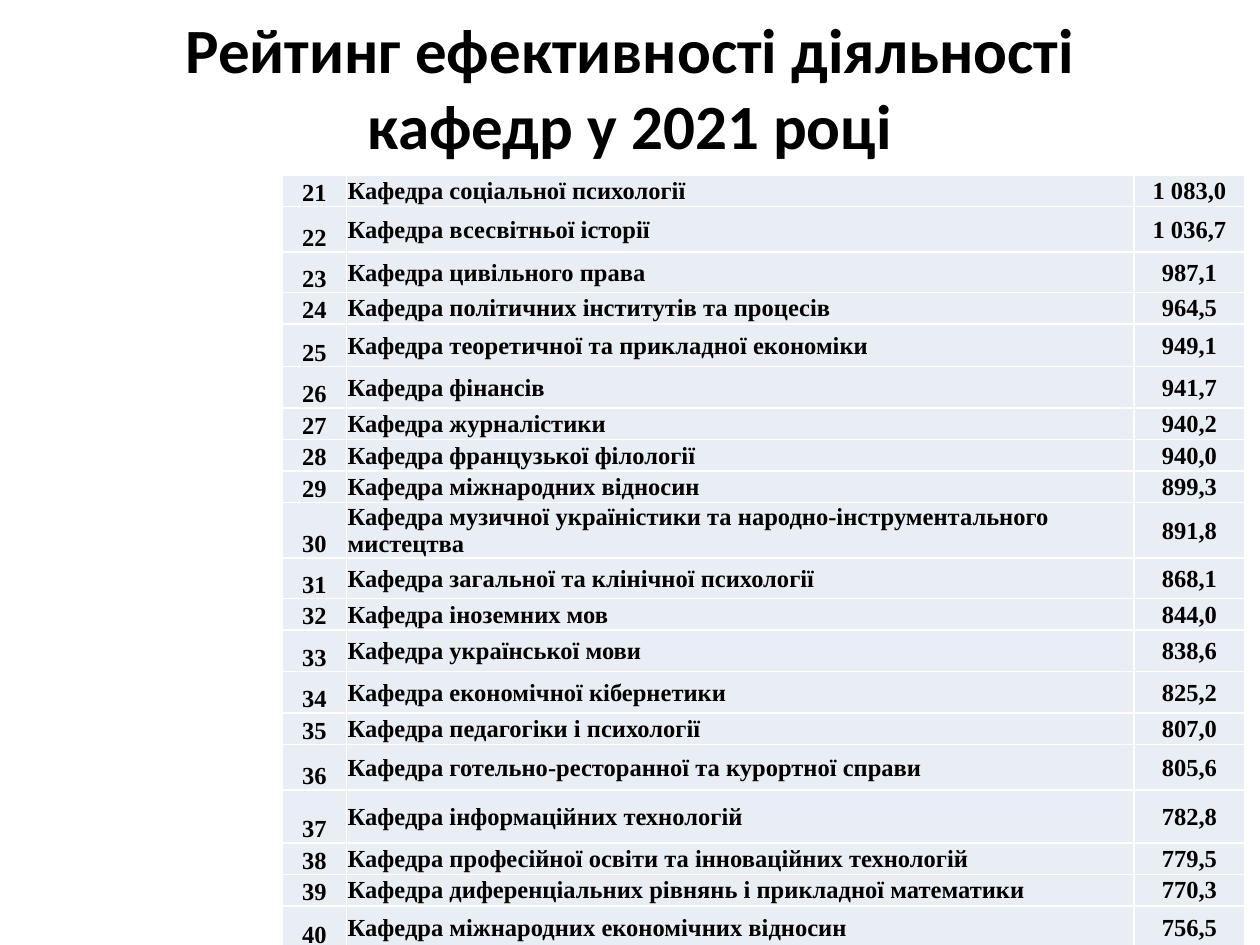
from lxml import etree
from pptx import Presentation
from pptx.dml.color import RGBColor
from pptx.enum.text import MSO_ANCHOR as Anchor, MSO_AUTO_SIZE as AutoSize, PP_ALIGN as Align
from pptx.oxml.ns import qn
from pptx.util import Inches, Pt

BLACK = RGBColor(0x00, 0x00, 0x00)
WHITE = RGBColor(0xFF, 0xFF, 0xFF)
PALE_BLUE = RGBColor(0xE9, 0xED, 0xF4)

TITLE = "Рейтинг ефективності діяльності кафедр у 2021 році"
FIRST_RANK = 21
COL_WIDTHS = (0.51, 6.25, 0.88)

# Row height, department, score
DEPARTMENTS = [
    (0.25, "Кафедра соціальної психології", "1 083,0"),
    (0.36, "Кафедра всесвітньої історії", "1 036,7"),
    (0.32, "Кафедра цивільного права", "987,1"),
    (0.25, "Кафедра політичних інститутів та процесів", "964,5"),
    (0.34, "Кафедра теоретичної та прикладної економіки", "949,1"),
    (0.33, "Кафедра фінансів", "941,7"),
    (0.25, "Кафедра журналістики", "940,2"),
    (0.25, "Кафедра французької філології", "940,0"),
    (0.25, "Кафедра міжнародних відносин", "899,3"),
    (0.25, "Кафедра музичної україністики та народно-інструментального мистецтва", "891,8"),
    (0.32, "Кафедра загальної та клінічної психології", "868,1"),
    (0.25, "Кафедра іноземних мов", "844,0"),
    (0.33, "Кафедра української мови", "838,6"),
    (0.33, "Кафедра економічної кібернетики", "825,2"),
    (0.25, "Кафедра педагогіки і психології", "807,0"),
    (0.36, "Кафедра готельно-ресторанної та курортної справи", "805,6"),
    (0.42, "Кафедра інформаційних технологій", "782,8"),
    (0.25, "Кафедра професійної освіти та інноваційних технологій", "779,5"),
    (0.25, "Кафедра диференціальних рівнянь і прикладної математики", "770,3"),
    (0.34, "Кафедра міжнародних економічних відносин", "756,5"),
]


def add_run(p, text, font, size):
    r = p.add_run()
    r.text = text
    r.font.name = font
    r.font.size = Pt(size)
    r.font.bold = True
    r.font.color.rgb = BLACK


def set_title(s):
    sp = s.shapes.title
    sp.left, sp.top, sp.width, sp.height = map(Inches, (0.5, 0.3, 9, 0.77))
    tf = sp.text_frame
    tf.word_wrap = True
    tf.auto_size = AutoSize.NONE
    tf.vertical_anchor = Anchor.MIDDLE
    p = tf.paragraphs[0]
    p.alignment = Align.CENTER
    add_run(p, TITLE, "Calibri", 36)


def set_borders(cell):
    tc_pr = cell._tc.get_or_add_tcPr()
    for i, side in enumerate(("a:lnL", "a:lnR", "a:lnT", "a:lnB")):
        ln = etree.Element(qn(side), w=str(Pt(1)))
        fill = etree.SubElement(ln, qn("a:solidFill"))
        etree.SubElement(fill, qn("a:srgbClr"), val=str(WHITE))
        tc_pr.insert(i, ln)  # borders come before the cell fill


def fill_cell(cell, text, align, anchor):
    cell.margin_left = cell.margin_right = cell.margin_top = Inches(0.01)
    cell.margin_bottom = 0
    cell.vertical_anchor = anchor
    cell.fill.solid()
    cell.fill.fore_color.rgb = PALE_BLUE
    set_borders(cell)
    p = cell.text_frame.paragraphs[0]
    p.alignment = align
    add_run(p, text, "Times New Roman", 14)


def add_ranking(s):
    height = sum(row[0] for row in DEPARTMENTS)
    table = s.shapes.add_table(
        len(DEPARTMENTS), len(COL_WIDTHS), Inches(2.24), Inches(1.39),
        Inches(sum(COL_WIDTHS)), Inches(height)).table
    table.first_row = table.horz_banding = False
    for col, width in zip(table.columns, COL_WIDTHS):
        col.width = Inches(width)
    for i, (row_height, department, score) in enumerate(DEPARTMENTS):
        table.rows[i].height = Inches(row_height)
        fill_cell(table.cell(i, 0), str(FIRST_RANK + i), Align.CENTER, Anchor.BOTTOM)
        fill_cell(table.cell(i, 1), department, Align.LEFT, Anchor.MIDDLE)
        fill_cell(table.cell(i, 2), score, Align.CENTER, Anchor.MIDDLE)


def main():
    prs = Presentation()
    prs.slide_width, prs.slide_height = Inches(10), Inches(7.5)
    s = prs.slides.add_slide(prs.slide_layouts[5])  # Title Only
    set_title(s)
    add_ranking(s)
    prs.save("out.pptx")


if __name__ == "__main__":
    main()
